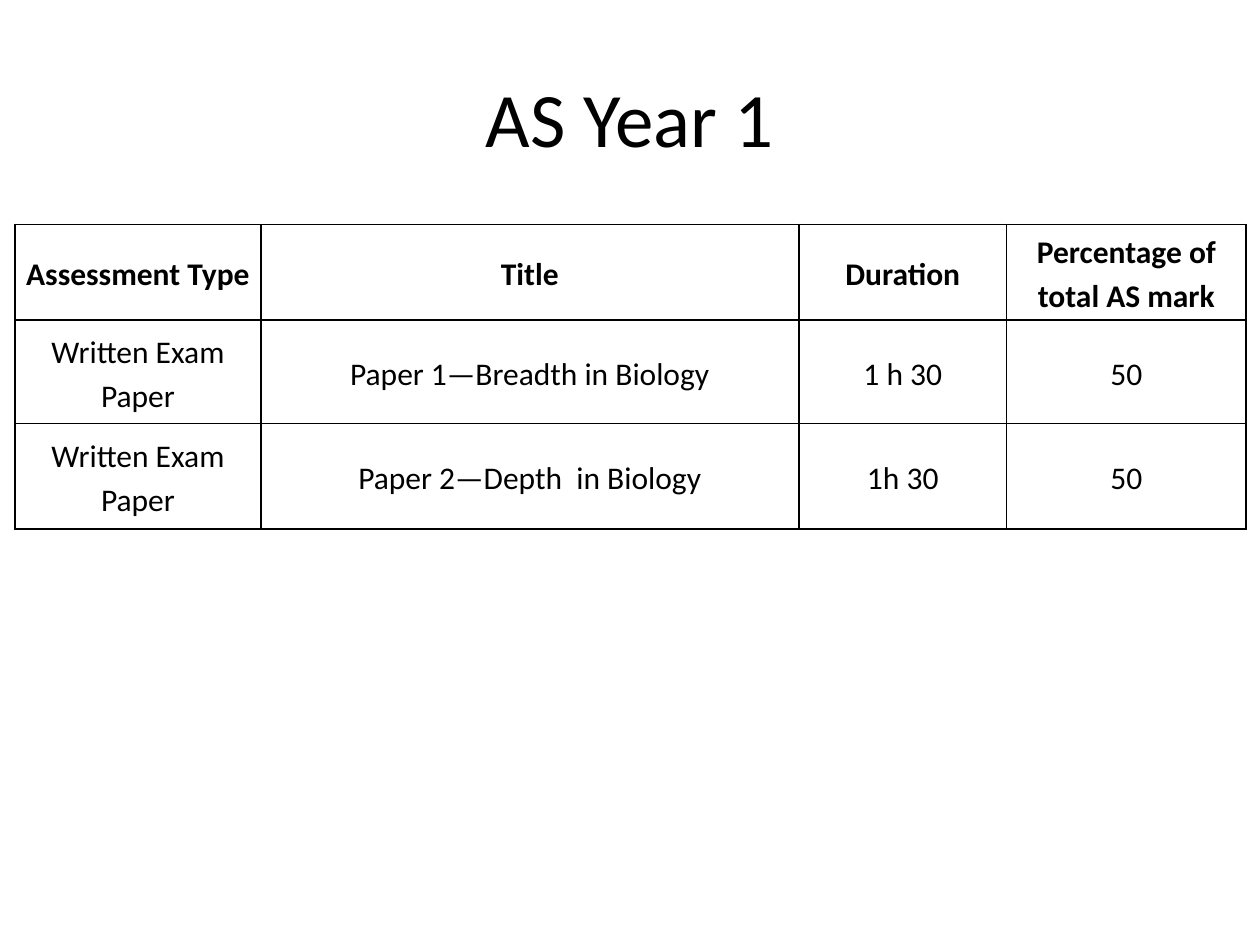
from dataclasses import dataclass

from lxml import etree
from pptx import Presentation
from pptx import util as u
from pptx.dml.color import RGBColor
from pptx.enum import text
from pptx.oxml.ns import qn

WIDE, HIGH = 10, 7.5
FONT, INK = "Calibri", "000000"
COLS = (1.95, 4.27, 1.65, 1.9)
ROWS = (0.76, 0.82, 0.84)


@dataclass
class Exam:
    kind: str
    title: str
    time: str
    share: str

    def cells(self) -> tuple:
        return self.kind, self.title, self.time, self.share


HEAD = Exam("Assessment Type", "Title", "Duration", "Percentage of total AS mark")
EXAMS = (
    Exam("Written Exam Paper", "Paper 1—Breadth in Biology", "1 h 30", "50"),
    Exam("Written Exam Paper", "Paper 2—Depth  in Biology", "1h 30", "50"),
)


def style(para, size: float, bold: bool = False) -> None:
    para.alignment = text.PP_ALIGN.CENTER
    for run in para.runs:
        font = run.font
        font.name, font.size, font.bold = FONT, u.Pt(size), bold
        font.color.rgb = RGBColor.from_string(INK)


def border(cell, width: float = 1) -> None:
    props = cell._tc.get_or_add_tcPr()
    for spot, side in enumerate(("lnL", "lnR", "lnT", "lnB")):
        line = etree.Element(qn(f"a:{side}"), w=str(u.Pt(width)))
        fill = etree.SubElement(line, qn("a:solidFill"))
        etree.SubElement(fill, qn("a:srgbClr"), val=INK)
        props.insert(spot, line)


def write(cell, words: str, bold: bool) -> None:
    cell.text_frame.text = words
    cell.vertical_anchor = text.MSO_ANCHOR.MIDDLE
    cell.margin_left = cell.margin_right = u.Inches(0.07)
    cell.margin_top = cell.margin_bottom = 0
    para = cell.text_frame.paragraphs[0]
    para.line_spacing, para.space_after = 1.15, u.Pt(10)
    style(para, 18, bold)
    cell.fill.background()
    border(cell)


def add_exams(slide) -> None:
    left, top = WIDE * 0.012, HIGH * 0.2373
    box = [u.Inches(n) for n in (left, top, sum(COLS), sum(ROWS))]
    table = slide.shapes.add_table(len(ROWS), len(COLS), *box).table
    table.horz_banding = False
    for col, width in zip(table.columns, COLS):
        col.width = u.Inches(width)
    for row, height, exam in zip(table.rows, ROWS, (HEAD, *EXAMS)):
        row.height = u.Inches(height)
        for cell, words in zip(row.cells, exam.cells()):
            write(cell, words, exam is HEAD)


def add_title(slide, words: str) -> None:
    title = slide.shapes.title
    title.left, title.top = u.Inches(WIDE * 0.05), u.Inches(HIGH * 0.04)
    title.width, title.height = u.Inches(WIDE * 0.9), u.Inches(HIGH / 6)
    frame = title.text_frame
    frame.text = words
    frame.vertical_anchor = text.MSO_ANCHOR.MIDDLE
    style(frame.paragraphs[0], 44)


def main() -> None:
    deck = Presentation()
    deck.slide_width, deck.slide_height = u.Inches(WIDE), u.Inches(HIGH)
    slide = deck.slides.add_slide(deck.slide_layouts[5])
    add_exams(slide)
    add_title(slide, "AS Year 1")
    deck.save("out.pptx")


if __name__ == "__main__":
    main()
